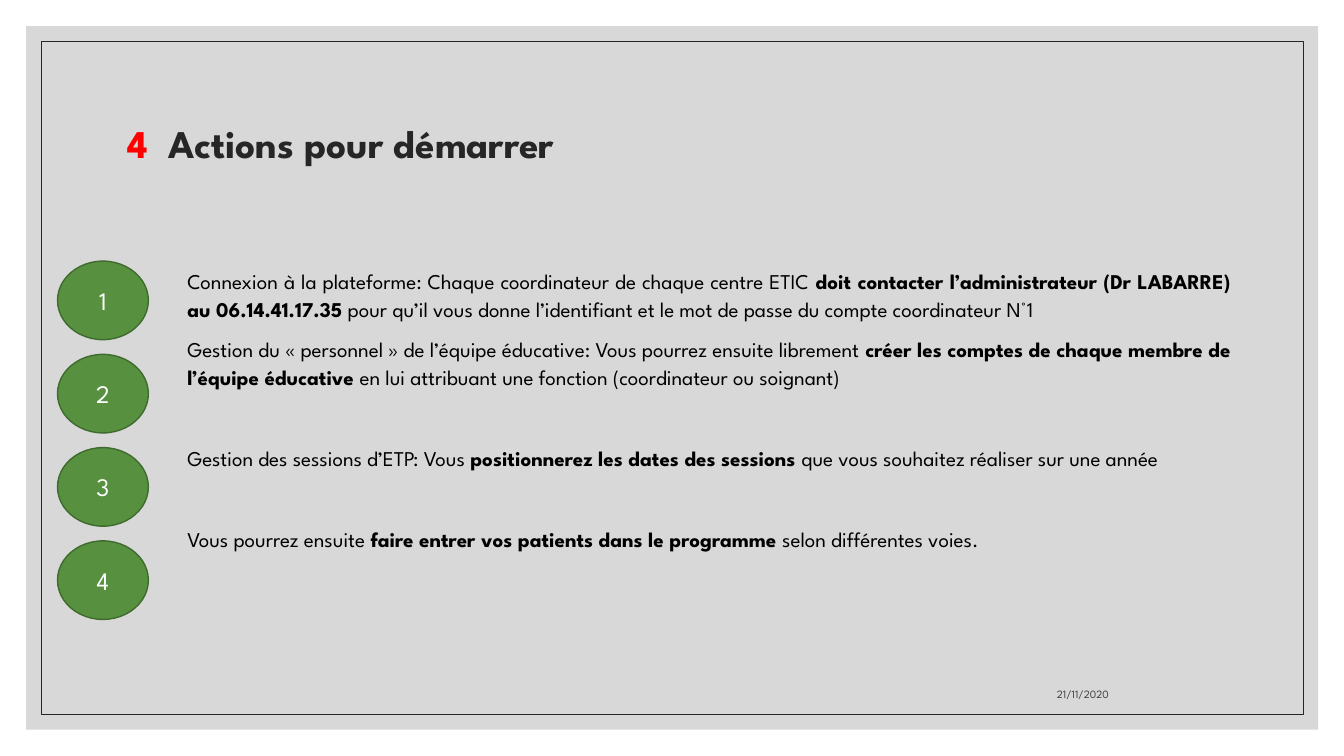
"""Build the slide listing the four actions needed to get started."""
from lxml import etree
from pptx import Presentation
from pptx.dml.color import RGBColor
from pptx.enum.shapes import MSO_SHAPE
from pptx.enum.text import MSO_ANCHOR, MSO_AUTO_SIZE, PP_ALIGN
from pptx.oxml.ns import qn
from pptx.util import Cm, Pt

RECTANGLE, OVAL = MSO_SHAPE.RECTANGLE, MSO_SHAPE.OVAL
TOP, MIDDLE, BOTTOM = MSO_ANCHOR.TOP, MSO_ANCHOR.MIDDLE, MSO_ANCHOR.BOTTOM
LEFT, CENTER = PP_ALIGN.LEFT, PP_ALIGN.CENTER
RIGHT, JUSTIFY = PP_ALIGN.RIGHT, PP_ALIGN.JUSTIFY
NO_AUTOFIT = MSO_AUTO_SIZE.NONE
TITLE_ONLY = 5

ACTIONS = [
    (0, ["Connexion à la plateforme: Chaque coordinateur de chaque centre ETIC ",
         "doit contacter l’administrateur (Dr LABARRE) au 06.14.41.17.35",
         " pour qu’il vous donne l’identifiant et le mot de passe du compte "
         "coordinateur N°1"]),
    (9, ["Gestion du «\u00a0personnel\u00a0» de l’équipe éducative: "
         "Vous pourrez ensuite librement ",
         "créer les comptes de chaque membre de l’équipe éducative ",
         "en lui attribuant une fonction (coordinateur ou soignant)"]),
    (38, ["Gestion des sessions d’ETP: Vous ",
          "positionnerez les dates des sessions ",
          "que vous souhaitez réaliser sur une année"]),
    (38, ["Vous pourrez ensuite ",
          "faire entrer vos patients dans le programme ",
          "selon différentes voies."]),
]


def rgb(code):
    """Turn a hex string into a colour."""
    return RGBColor.from_string(code)


def add_run(paragraph, text, font="League Spartan", size=15, color="000000", bold=False):
    """Append a formatted run to a paragraph."""
    run = paragraph.add_run()
    run.text = text
    run.font.name = font
    run.font.size = Pt(size)
    run.font.bold = bold
    run.font.color.rgb = rgb(color)


class ActionSlide:
    """Hold the palette and the slide being built."""

    green, dark_green, grey = "57903F", "406B2F", "BFBFBF"
    ink, red, white, date_grey = "262626", "FF0000", "FFFFFF", "404040"

    def __init__(self, deck):
        """Add a title-only slide to the deck."""
        self.slide = deck.slides.add_slide(deck.slide_layouts[TITLE_ONLY])

    def shape(self, kind, left, top, width, height, fill=None, opacity=100,
              line=None, weight=1):
        """Add a preset shape with an optional fill and outline."""
        shape = self.slide.shapes.add_shape(
            kind, Cm(left), Cm(top), Cm(width), Cm(height))
        shape.shadow.inherit = False
        if fill:
            shape.fill.solid()
            shape.fill.fore_color.rgb = rgb(fill)
            if opacity < 100:
                color = shape.element.spPr.find(qn("a:solidFill"))[0]
                etree.SubElement(color, qn("a:alpha"), val=str(opacity * 1000))
        else:
            shape.fill.background()
        if line:
            shape.line.color.rgb = rgb(line)
            shape.line.width = Pt(weight)
        else:
            shape.line.fill.background()
        return shape

    def frame(self):
        """Draw the grey panel and the thin border inside it."""
        self.shape(RECTANGLE, 0.66, 0.66, 32.56, 17.73, fill=self.grey, opacity=60)
        self.shape(RECTANGLE, 1.04, 1.04, 31.8, 16.97, line=self.ink, weight=0.5)

    def title(self, number, text):
        """Place the title above the frame, with a red number before a tab."""
        title = self.slide.shapes.title
        title.element.getparent().append(title.element)
        title.left, title.top, title.width, title.height = (
            Cm(2.97), Cm(1.78), Cm(27.94), Cm(3.81))
        title.text_frame.auto_size = NO_AUTOFIT
        title.text_frame.vertical_anchor = MIDDLE
        heading = title.text_frame.paragraphs[0]
        heading.alignment, heading.line_spacing = LEFT, 0.9
        tabs = etree.SubElement(heading._p.get_or_add_pPr(), qn("a:tabLst"))
        etree.SubElement(tabs, qn("a:tab"), pos=str(Cm(1.02)), algn="l")
        add_run(heading, number, size=28, color=self.red, bold=True)
        add_run(heading, "\t" + text, size=28, color=self.ink, bold=True)

    def text_box(self, left, top, width, height, anchor=TOP):
        """Add a wrapping text box and return its text frame."""
        frame = self.slide.shapes.add_textbox(
            Cm(left), Cm(top), Cm(width), Cm(height)).text_frame
        frame.word_wrap = True
        frame.vertical_anchor = anchor
        return frame

    def actions(self, actions):
        """Write the justified paragraphs, the middle part of each in bold."""
        frame = self.text_box(4.47, 6.58, 26.8, 9.02)
        for index, (gap, parts) in enumerate(actions):
            action = frame.add_paragraph() if index else frame.paragraphs[0]
            action.alignment, action.line_spacing = JUSTIFY, 1.1
            action.space_before = Pt(gap)
            for position, part in enumerate(parts):
                add_run(action, part, bold=position == 1)

    def date(self, text):
        """Write the date at the bottom right."""
        paragraph = self.text_box(20.17, 16.76, 8.03, 1.02, BOTTOM).paragraphs[0]
        paragraph.alignment = RIGHT
        add_run(paragraph, text, size=8, color=self.date_grey)

    def badge(self, index):
        """Draw one numbered green oval."""
        oval = self.shape(OVAL, 1.45, 6.58 + 2.35 * index, 2.29, 1.98,
                          fill=self.green, line=self.dark_green)
        oval.text_frame.vertical_anchor = MIDDLE
        label = oval.text_frame.paragraphs[0]
        label.alignment = CENTER
        add_run(label, str(index + 1), size=18, color=self.white)


def main():
    """Build and save the deck."""
    deck = Presentation()
    deck.slide_width, deck.slide_height = Cm(33.87), Cm(19.05)
    page = ActionSlide(deck)
    page.frame()
    page.title("4", "Actions pour démarrer")
    page.actions(ACTIONS)
    page.date("21/11/2020")
    for index in range(len(ACTIONS)):
        page.badge(index)
    deck.save("out.pptx")


if __name__ == "__main__":
    main()
